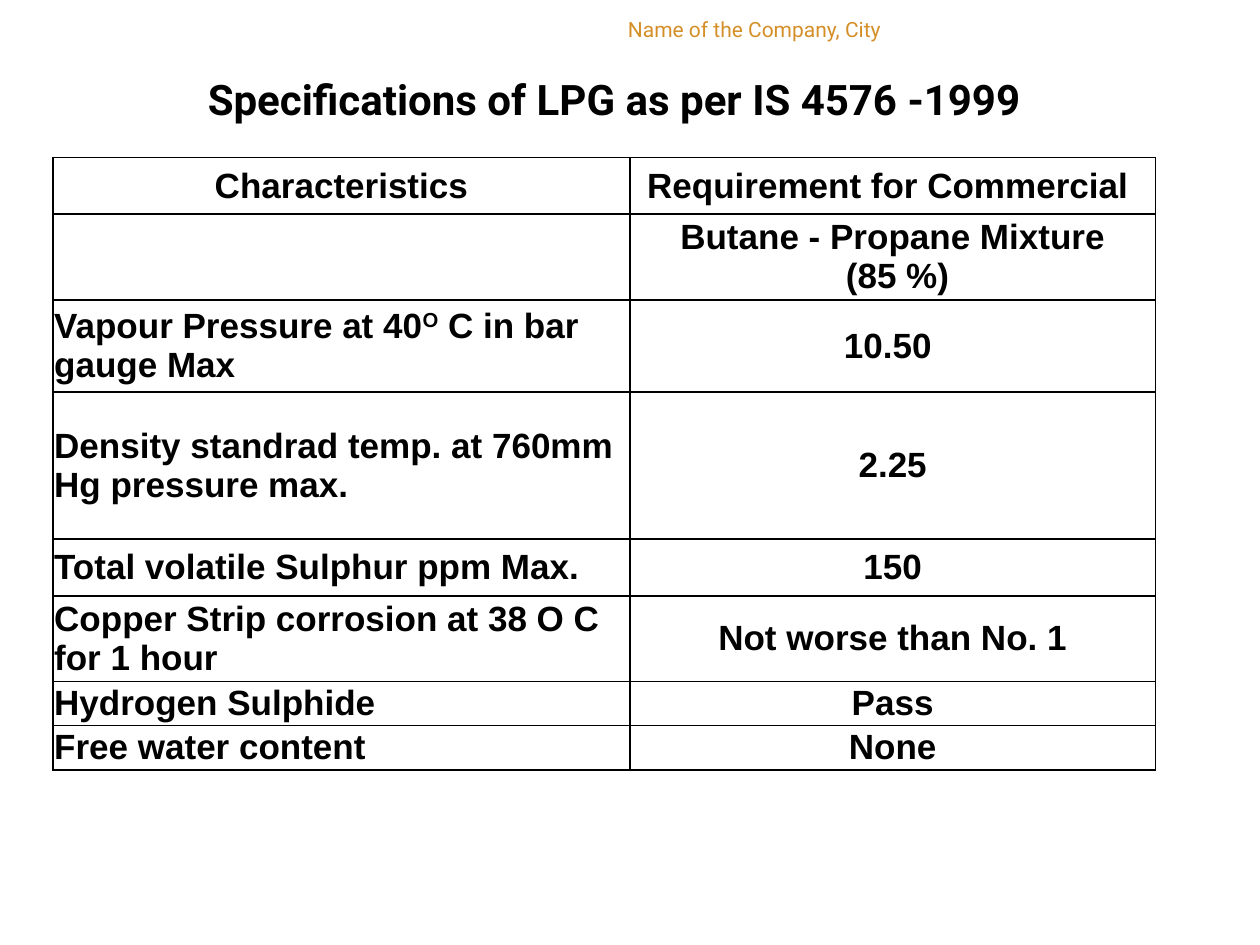
from lxml import etree
from pptx import Presentation
from pptx.dml.color import RGBColor
from pptx.enum.text import MSO_ANCHOR, PP_ALIGN
from pptx.oxml.ns import qn
from pptx.util import Inches, Pt

BLACK = RGBColor(0x00, 0x00, 0x00)
GOLD = RGBColor(0xD4, 0x8F, 0x29)
LEFT, CENTER, RIGHT = PP_ALIGN.LEFT, PP_ALIGN.CENTER, PP_ALIGN.RIGHT
TOP, MIDDLE = MSO_ANCHOR.TOP, MSO_ANCHOR.MIDDLE

TITLE_FONT = {"name": "Roboto", "size": Pt(24), "bold": True}
HEADER_FONT = {"name": "Roboto", "size": Pt(12), "bold": False}
CELL_FONT = {"name": "Arial", "size": Pt(20), "bold": True}

COL_WIDTHS = [4.58, 4.17]
# Row height, characteristic, requirement; "^" encloses superscript text
ROWS = [
    (0.45, "Characteristics", "Requirement for Commercial "),
    (0.68, "", "Butane - Propane Mixture\n (85 %)"),
    (0.73, "Vapour Pressure at 40^O^ C in bar gauge Max", "10.50 "),
    (1.17, "Density standrad temp. at 760mm Hg pressure max.", "2.25"),
    (0.45, "Total volatile Sulphur ppm Max.", "150"),
    (0.68, "Copper Strip corrosion at 38 O C for 1 hour", "Not worse than No. 1"),
    (0.35, "Hydrogen Sulphide", "Pass"),
    (0.35, "Free water content", "None"),
]


def write_text(tf, text, align, font, color):
    """Fill a text frame: one paragraph per line, "^" toggles superscript."""
    for i, line in enumerate(text.split("\n")):
        p = tf.paragraphs[0] if i == 0 else tf.add_paragraph()
        p.alignment = align
        for j, part in enumerate(line.split("^")):
            r = p.add_run()
            r.text = part
            for name, value in font.items():
                setattr(r.font, name, value)
            r.font.color.rgb = color
            if j % 2:
                r.font._element.set("baseline", "30000")


def set_borders(cell):
    tcPr = cell._tc.get_or_add_tcPr()
    for i, side in enumerate(("a:lnL", "a:lnR", "a:lnT", "a:lnB")):
        ln = etree.Element(qn(side), w=str(Pt(1)))
        fill = etree.SubElement(ln, qn("a:solidFill"))
        etree.SubElement(fill, qn("a:srgbClr"), val=str(BLACK))
        tcPr.insert(i, ln)


prs = Presentation()
prs.slide_width, prs.slide_height = Inches(10), Inches(7.5)
s = prs.slides.add_slide(prs.slide_layouts[5])

# Specification table
table = s.shapes.add_table(
    len(ROWS), len(COL_WIDTHS), Inches(0.42), Inches(1.25),
    Inches(sum(COL_WIDTHS)), Inches(sum(row[0] for row in ROWS))).table
for col, width in zip(table.columns, COL_WIDTHS):
    col.width = Inches(width)
for r_idx, (height, *texts) in enumerate(ROWS):
    table.rows[r_idx].height = Inches(height)
    for c_idx, text in enumerate(texts):
        cell = table.cell(r_idx, c_idx)
        cell.fill.background()
        set_borders(cell)
        cell.vertical_anchor = MIDDLE
        for side in ("left", "right", "top", "bottom"):
            setattr(cell, f"margin_{side}", Inches(0.01))
        if text:
            align = LEFT if c_idx == 0 and r_idx > 0 else CENTER
            write_text(cell.text_frame, text, align, CELL_FONT, BLACK)

# Title
title = s.shapes.title
title.left, title.top = Inches(0.25), Inches(0.51)
title.width, title.height = Inches(9.25), Inches(0.81)
tf = title.text_frame
tf.vertical_anchor = TOP
tf.margin_top = Inches(0.07)
write_text(tf, "Specifications of LPG as per IS 4576 -1999", CENTER, TITLE_FONT, BLACK)

# Organisation line
header = s.shapes.add_textbox(Inches(3.42), Inches(0.08), Inches(3.67), Inches(0.32))
header.text_frame.word_wrap = True
write_text(header.text_frame, "Name of the Company, City", RIGHT, HEADER_FONT, GOLD)

prs.save("out.pptx")
